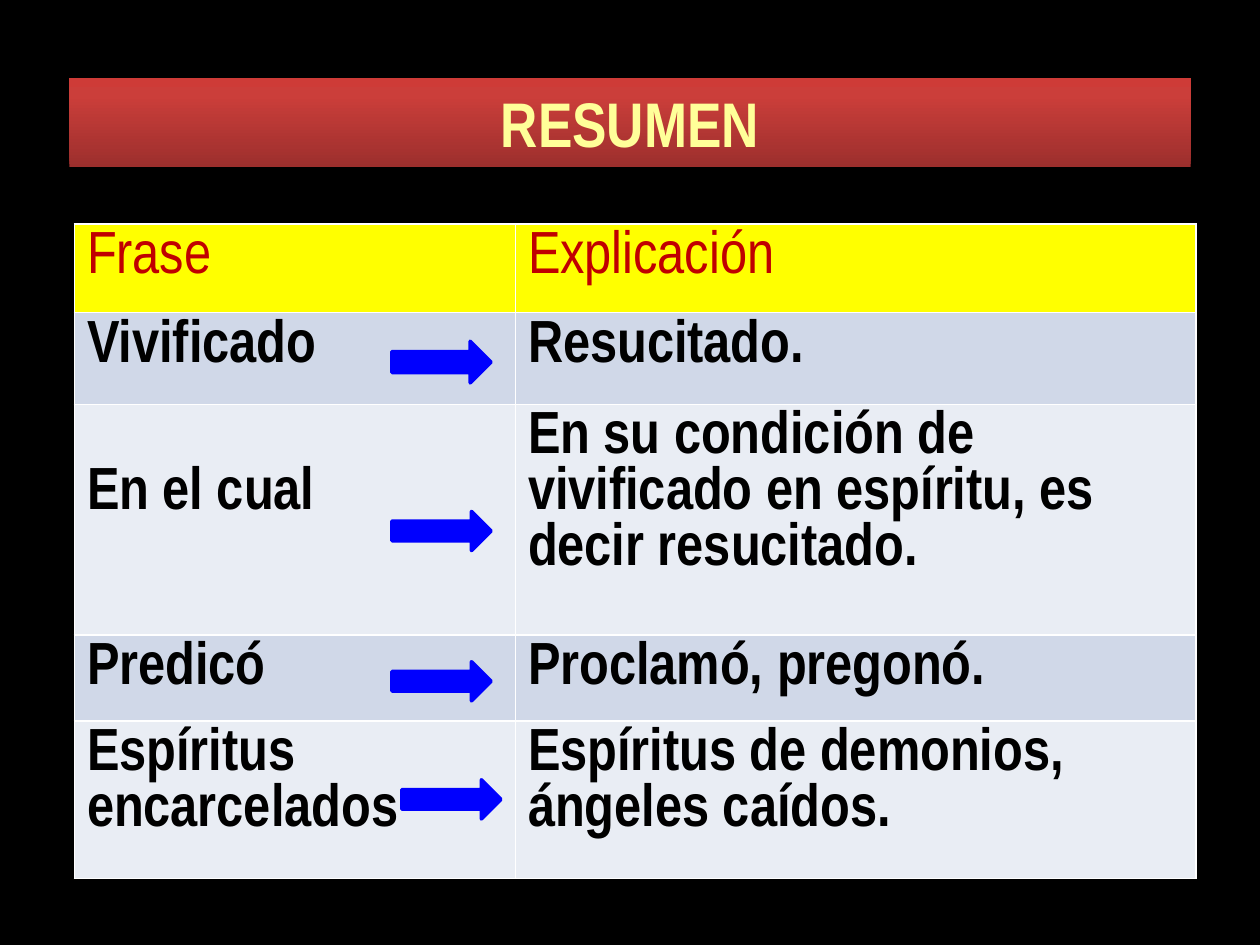
import copy
from dataclasses import dataclass

import pptx
import pptx.dml.color
import pptx.enum.shapes
import pptx.enum.text
import pptx.oxml
import pptx.oxml.ns
import pptx.util

Cm = pptx.util.Cm
Pt = pptx.util.Pt


def rgb(code):
    return pptx.dml.color.RGBColor.from_string(code)


@dataclass(frozen=True)
class Theme:
    font: str = "Arial Narrow"
    head: int = 36
    body: int = 34
    back: str = "000000"
    title: str = "FFFF99"
    glow: str = "FFFF00"
    label: str = "C00000"
    text: str = "000000"
    top: str = "FFFF00"
    bands: tuple = ("D0D8E8", "E9EDF4")
    arrow: str = "0000FE"
    ramp: tuple = ((0, "9C2F2D"), (0.8, "CB3E3A"), (1, "CE3B37"))


THEME = Theme()

ROWS = [
    ("Frase", "Explicación"),
    ("Vivificado", "Resucitado."),
    ("En el cual", "En su condición de vivificado en espíritu, es decir resucitado."),
    ("Predicó", "Proclamó, pregonó."),
    ("Espíritus encarcelados", "Espíritus de demonios, ángeles caídos."),
]
WIDTHS = (8.89, 13.72)
HEIGHTS = (1.78, 1.85, 4.65, 1.73, 3.18)
# Left, top and height of each arrow
ARROWS = [(7.9, 6.88, 0.84), (7.9, 10.31, 0.79), (7.9, 13.34, 0.79), (8.1, 15.72, 0.79)]


def add_run(para, text, size, color, bold=True, edge=None):
    run = para.add_run()
    run.text = text
    font = run.font
    font.name, font.size, font.bold = THEME.font, Pt(size), bold
    font.color.rgb = rgb(color)
    if edge:
        # Outline of the letters
        line = pptx.oxml.parse_xml(
            f'<a:ln {pptx.oxml.ns.nsdecls("a")} w="9144"><a:solidFill>'
            f'<a:srgbClr val="{edge}"/></a:solidFill></a:ln>')
        run._r.get_or_add_rPr().insert(0, line)


def fill_ramp(fill):
    fill.gradient()
    fill.gradient_angle = 90
    last = fill.gradient_stops[1]._gs
    last.addprevious(copy.deepcopy(last))
    for stop, (place, color) in zip(fill.gradient_stops, THEME.ramp):
        stop.position = place
        stop.color.rgb = rgb(color)


def add_title(slide, text):
    box = slide.shapes.title
    box.left, box.top, box.width, box.height = Cm(1.4), Cm(1.57), Cm(22.6), Cm(1.8)
    fill_ramp(box.fill)
    frame = box.text_frame
    frame.auto_size = pptx.enum.text.MSO_AUTO_SIZE.NONE
    frame.vertical_anchor = pptx.enum.text.MSO_ANCHOR.MIDDLE
    para = frame.paragraphs[0]
    para.alignment = pptx.enum.text.PP_ALIGN.CENTER
    add_run(para, text, THEME.head, THEME.title, edge=THEME.glow)


def add_grid(slide):
    table = slide.shapes.add_table(
        len(ROWS), len(WIDTHS), Cm(1.5), Cm(4.52),
        Cm(sum(WIDTHS)), Cm(sum(HEIGHTS))).table
    for col, width in zip(table.columns, WIDTHS):
        col.width = Cm(width)
    for i, (row, height) in enumerate(zip(table.rows, HEIGHTS)):
        row.height = Cm(height)
        for cell, text in zip(row.cells, ROWS[i]):
            cell.fill.solid()
            para = cell.text_frame.paragraphs[0]
            if i == 0:
                cell.fill.fore_color.rgb = rgb(THEME.top)
                add_run(para, text, THEME.body, THEME.label, False, THEME.label)
            else:
                cell.fill.fore_color.rgb = rgb(THEME.bands[(i - 1) % 2])
                add_run(para, text, THEME.body, THEME.text)
    # This phrase sits one line lower
    table.cell(2, 0).margin_top = Cm(1.25)


def add_arrow(slide, left, top, height):
    arrow = slide.shapes.add_shape(
        pptx.enum.shapes.MSO_SHAPE.RIGHT_ARROW, Cm(left), Cm(top), Cm(2), Cm(height))
    arrow.shadow.inherit = False
    arrow.fill.solid()
    arrow.fill.fore_color.rgb = rgb(THEME.arrow)
    arrow.line.color.rgb = rgb(THEME.arrow)
    arrow.line.width = Pt(2)


def main():
    deck = pptx.Presentation()
    deck.slide_width, deck.slide_height = Cm(25.4), Cm(19.05)
    slide = deck.slides.add_slide(deck.slide_layouts[5])
    slide.background.fill.solid()
    slide.background.fill.fore_color.rgb = rgb(THEME.back)

    # Title bar, table, then the arrows on top
    add_title(slide, "RESUMEN")
    add_grid(slide)
    for spot in ARROWS:
        add_arrow(slide, *spot)
    deck.save("out.pptx")


if __name__ == "__main__":
    main()
